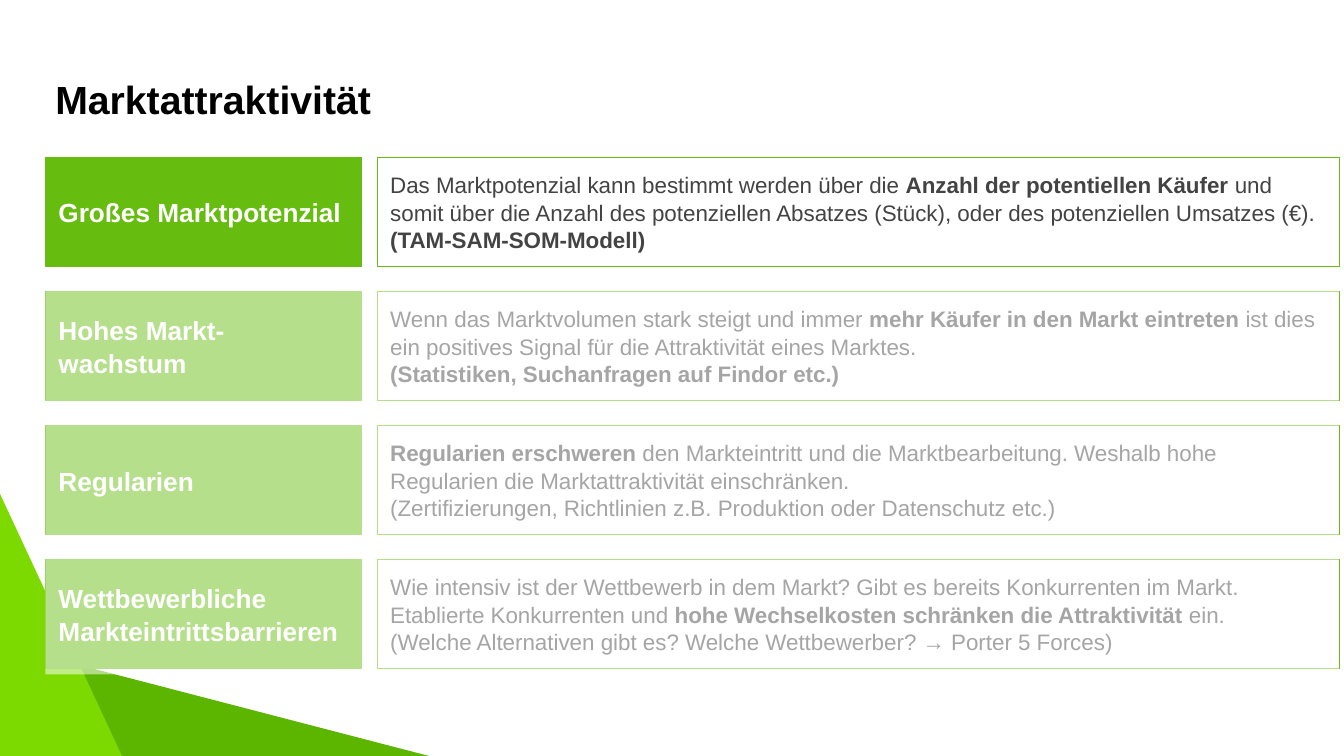
from pptx import Presentation
from pptx import util as u
from pptx.dml.color import RGBColor
from pptx.enum import shapes, text
from lxml import etree

GREEN = RGBColor(0x67, 0xBD, 0x0F)
DARK_GREEN = RGBColor(0x5C, 0xB6, 0x00)
BRIGHT_GREEN = RGBColor(0x7D, 0xDA, 0x00)
WHITE = RGBColor(0xFF, 0xFF, 0xFF)
BLACK = RGBColor(0, 0, 0)
GREY = RGBColor(0x43, 0x43, 0x43)

LEFT, TOP = 0.45, 1.56
LABEL_WIDTH, GAP, DETAIL_WIDTH = 3.14, 0.15, 9.55
ROW_HEIGHT, ROW_PITCH = 1.08, 1.33
LABEL_FORMAT = {"size": u.Pt(18.7), "name": "Arial", "bold": True}
DETAIL_FORMAT = {"size": u.Pt(16), "name": "Arial"}
TITLE_FORMAT = {"size": u.Pt(28), "name": "Arial", "bold": True}

CRITERIA = [
    ("Großes Marktpotenzial", [
        [("Das Marktpotenzial kann bestimmt werden über die ", False),
         ("Anzahl der potentiellen Käufer", True),
         (" und somit über die Anzahl des potenziellen Absatzes (Stück), "
          "oder des potenziellen Umsatzes (€).", False)],
        [("(TAM-SAM-SOM-Modell)", True)]]),
    ("Hohes Markt- wachstum", [
        [("Wenn das Marktvolumen stark steigt und immer ", False),
         ("mehr Käufer in den Markt eintreten", True),
         (" ist dies ein positives Signal für die Attraktivität eines Marktes.", False)],
        [("(Statistiken, Suchanfragen auf Findor etc.)", True)]]),
    ("Regularien", [
        [("Regularien erschweren", True),
         (" den Markteintritt und die Marktbearbeitung. Weshalb hohe "
          "Regularien die Marktattraktivität einschränken.", False)],
        [("(Zertifizierungen, Richtlinien z.B. Produktion oder Datenschutz etc.)", False)]]),
    ("Wettbewerbliche Markteintrittsbarrieren", [
        [("Wie intensiv ist der Wettbewerb in dem Markt? Gibt es bereits Konkurrenten "
          "im Markt. Etablierte Konkurrenten und ", False),
         ("hohe Wechselkosten schränken die Attraktivität", True),
         (" ein.", False)],
        [("(Welche Alternativen gibt es? Welche Wettbewerber? → Porter 5 Forces)", False)]]),
]

presentation = Presentation()
presentation.slide_width, presentation.slide_height = u.Inches(13.33), u.Inches(7.5)
slide = presentation.slides.add_slide(presentation.slide_layouts[6])


def add_block(kind, left, top, width, height, fill, line=None):
    shape = slide.shapes.add_shape(kind, *map(u.Inches, (left, top, width, height)))
    shape.shadow.inherit = False
    shape.fill.solid()
    shape.fill.fore_color.rgb = fill
    if line is None:
        shape.line.fill.background()
    else:
        shape.line.color.rgb = line
        shape.line.width = u.Pt(0.75)
    return shape


def write(shape, paragraphs, formats, color, inset, anchor, spacing):
    frame = shape.text_frame
    settings = {"word_wrap": True, "vertical_anchor": anchor}
    settings.update({f"margin_{side}": u.Inches(inset)
                     for side in ("left", "top", "right", "bottom")})
    for name, value in settings.items():
        setattr(frame, name, value)
    for index, pieces in enumerate(paragraphs):
        paragraph = frame.add_paragraph() if index else frame.paragraphs[0]
        paragraph.alignment = text.PP_ALIGN.LEFT
        paragraph.line_spacing = spacing
        for words, bold in pieces:
            run = paragraph.add_run()
            run.text = words
            for name, value in {"bold": bold, **formats}.items():
                setattr(run.font, name, value)
            run.font.color.rgb = color


TRIANGLE = shapes.MSO_SHAPE.ISOSCELES_TRIANGLE
RECTANGLE = shapes.MSO_SHAPE.RECTANGLE
MIDDLE = text.MSO_ANCHOR.MIDDLE

add_block(TRIANGLE, 0.06, 4.74, 2.87, 5.52, DARK_GREEN).rotation = 90
add_block(TRIANGLE, -1.27, 4.9, 2.54, 2.73, BRIGHT_GREEN)

title = slide.shapes.add_textbox(*map(u.Inches, (LEFT, 0.65, 12.42, 0.84)))
write(title, [[("Marktattraktivität", True)]], TITLE_FORMAT, BLACK, 0.1,
      text.MSO_ANCHOR.TOP, 1.0)

for row, (heading, details) in enumerate(CRITERIA):
    top = TOP + row * ROW_PITCH
    label = add_block(RECTANGLE, LEFT, top, LABEL_WIDTH, ROW_HEIGHT, GREEN, GREEN)
    write(label, [[(heading, True)]], LABEL_FORMAT, WHITE, 0.13, MIDDLE, 1.05)
    detail = add_block(RECTANGLE, LEFT + LABEL_WIDTH + GAP, top,
                       DETAIL_WIDTH, ROW_HEIGHT, WHITE, GREEN)
    write(detail, details, DETAIL_FORMAT, GREY, 0.13, MIDDLE, 1.03)

veil = add_block(RECTANGLE, LEFT, 2.81, 12.83, 3.88, WHITE)
veil_color = veil.fill._xPr.find(".//{*}srgbClr")
etree.SubElement(veil_color, veil_color.tag.replace("srgbClr", "alpha"), val="52000")

presentation.save("out.pptx")
